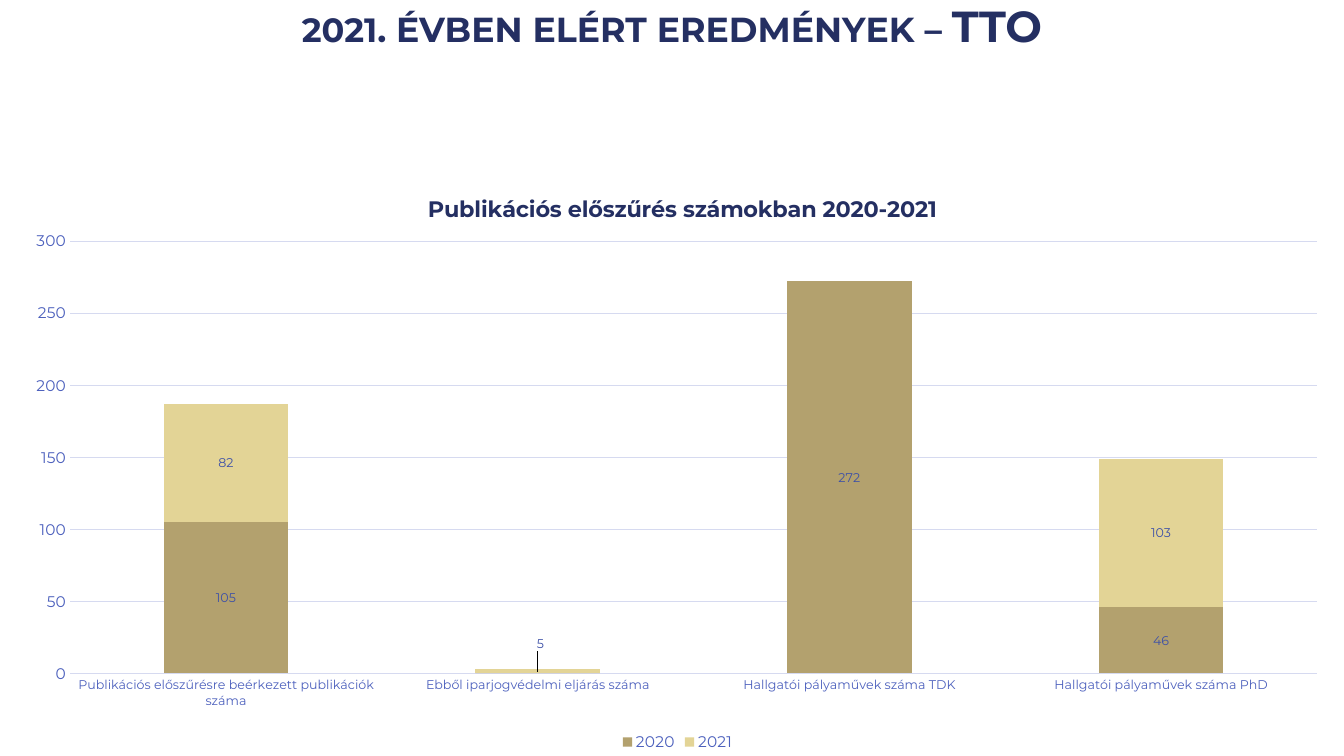
from lxml import etree
from pptx import Presentation
from pptx import util as u
from pptx.chart.data import CategoryChartData
from pptx.dml.color import RGBColor
from pptx.enum import chart as charts, text
from pptx.oxml.ns import qn

COLORS = {
    "navy": "242F62",
    "axis": "4C60BD",
    "label": "3D50A7",
    "grid": "D6DAF0",
    "2020": "B3A16E",
    "2021": "E3D496",
}
CATEGORIES = [
    "Publikációs előszűrésre beérkezett publikációk száma",
    "Ebből iparjogvédelmi eljárás száma",
    "Hallgatói pályaművek száma TDK",
    "Hallgatói pályaművek száma PhD",
]
COUNTS = {"2020": [105, 0, 272, 46], "2021": [82, 3, 0, 103]}


def color(name):
    return RGBColor.from_string(COLORS[name])


def set_font(font, size, name, bold=False):
    font.name = "Montserrat"
    font.size = u.Pt(size)
    font.bold = bold
    font.color.rgb = color(name)


def add_span(para, words, *, size, name="navy", bold=False, small_caps=False):
    span = para.add_run()
    span.text = words
    set_font(span.font, size, name, bold)
    if small_caps:
        span.font._element.set("cap", "small")


def set_layout(parent, index, **values):
    """Give a chart part a manual layout, in fractions of the chart."""
    for old in parent.findall(qn("c:layout")):
        parent.remove(old)
    layout = etree.Element(qn("c:layout"))
    manual = etree.SubElement(layout, qn("c:manualLayout"))
    for tag, value in values.items():
        etree.SubElement(manual, qn(f"c:{tag}")).set("val", str(value))
    parent.insert(index, layout)


class Slide:
    def __init__(self, deck):
        self.page = deck.slides.add_slide(deck.slide_layouts[6])

    def heading(self, spans, left, top, width, height):
        box = self.page.shapes.add_textbox(*map(u.Inches, (left, top, width, height)))
        box.text_frame.word_wrap = True
        para = box.text_frame.paragraphs[0]
        para.alignment = text.PP_ALIGN.CENTER
        para.line_spacing = 0.9
        for words, size in spans:
            add_span(para, words, size=size, bold=True, small_caps=True)

    def stacked_columns(self, title, left, top, width, height):
        data = CategoryChartData()
        data.categories = CATEGORIES
        for year, counts in COUNTS.items():
            data.add_series(year, counts)
        chart = self.page.shapes.add_chart(
            charts.XL_CHART_TYPE.COLUMN_STACKED,
            *map(u.Inches, (left, top, width, height)), data).chart
        set_font(chart.font, 10, "navy")

        # Title and plot area
        chart.has_title = True
        add_span(chart.chart_title.text_frame.paragraphs[0], title, size=16, bold=True)
        set_layout(chart.chart_title._element, 1,
                   xMode="edge", yMode="edge", x=0.31, y=0.04)
        plot_area = chart._chartSpace.find(".//" + qn("c:plotArea"))
        set_layout(plot_area, 0, layoutTarget="inner", xMode="edge", yMode="edge",
                   x=0.045, y=0.127, w=0.934, h=0.733)

        # Legend
        chart.has_legend = True
        chart.legend.position = charts.XL_LEGEND_POSITION.BOTTOM
        chart.legend.include_in_layout = False
        set_font(chart.legend.font, 11, "axis")

        # Axes
        for axis, size in ((chart.category_axis, 9), (chart.value_axis, 11)):
            axis.major_tick_mark = charts.XL_TICK_MARK.NONE
            set_font(axis.tick_labels.font, size, "axis")
        values = chart.value_axis
        values.minimum_scale, values.maximum_scale, values.major_unit = 0, 300, 50
        values.format.line.fill.background()
        values.has_major_gridlines = True
        for line in (chart.category_axis.format.line, values.major_gridlines.format.line):
            line.color.rgb = color("grid")
            line.width = u.Pt(0.75)

        # Columns, with labels for all values but zero
        plot = chart.plots[0]
        plot.gap_width, plot.overlap = 150, 100
        plot.vary_by_categories = False
        for series in plot.series:
            series.format.fill.solid()
            series.format.fill.fore_color.rgb = color(series.name)
            labels = series.data_labels
            labels.show_value = True
            labels.number_format = "0;;"
            labels.number_format_is_linked = False
            set_font(labels.font, 9, "label")
        return chart

    def raised_label(self, series, index, words):
        frame = series.points[index].data_label.text_frame
        add_span(frame.paragraphs[0], words, size=9, name="label")
        label = series._element.find(".//" + qn("c:dLbl"))
        set_layout(label, 1, x=0.002, y=-0.047)


def main():
    deck = Presentation()
    deck.slide_width, deck.slide_height = u.Inches(13.33), u.Inches(7.5)
    slide = Slide(deck)
    chart = slide.stacked_columns(
        "Publikációs előszűrés számokban 2020-2021", 0.1, 1.65, 13.24, 5.85)
    slide.raised_label(chart.plots[0].series[1], 1, "5")
    slide.heading([("2021", 30), (". évben elért eredmények – TTO", 31)],
                  0, 0, 13.33, 0.54)
    deck.save("out.pptx")


if __name__ == "__main__":
    main()
